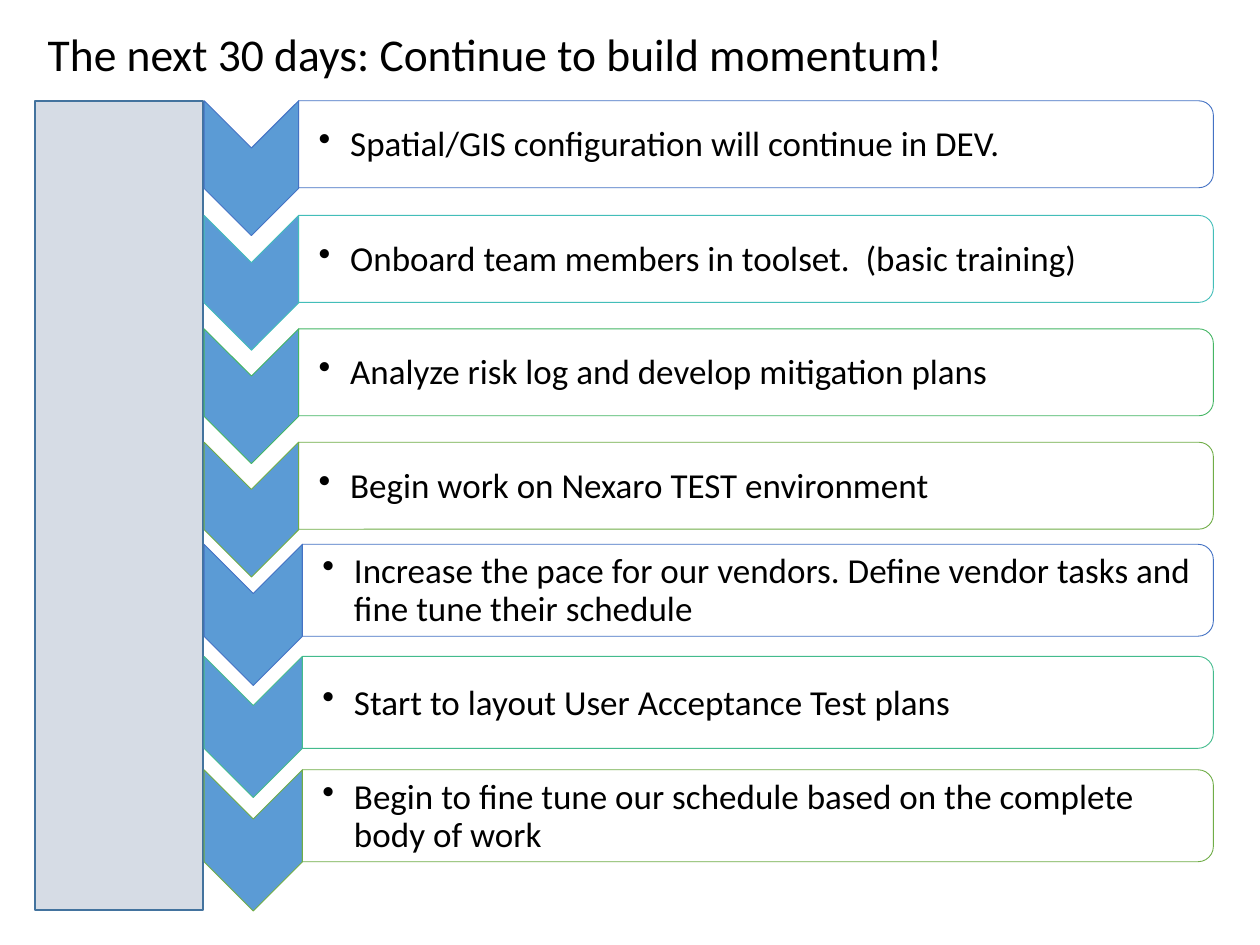
from lxml.etree import SubElement as Sub
from pptx import Presentation
from pptx.dml.color import RGBColor
from pptx.enum.shapes import MSO_SHAPE as Shape
from pptx.enum.text import MSO_ANCHOR as Anchor
from pptx.oxml.ns import qn
from pptx.util import Inches, Pt

BLACK = RGBColor(0x00, 0x00, 0x00)
WHITE = RGBColor(0xFF, 0xFF, 0xFF)
GREY = RGBColor(0xD6, 0xDC, 0xE5)
NAVY = RGBColor(0x43, 0x73, 0x9E)
SKY = RGBColor(0x5B, 0x9B, 0xD5)
BLUE = RGBColor(0x44, 0x72, 0xC4)
TEAL = RGBColor(0x43, 0xBE, 0xB9)
MINT = RGBColor(0x43, 0xBB, 0x8D)
GREEN = RGBColor(0x45, 0xB6, 0x64)
LEAF = RGBColor(0x70, 0xAD, 0x47)

LEFT, RIGHT = 1.62, 9.63
UPPER = (0.75, 1.07, 0.69)
LOWER = (0.78, 1.12, 0.73)
STEPS = [
    (0.8, UPPER, BLUE, "Spatial/GIS configuration will continue in DEV."),
    (1.71, UPPER, TEAL, "Onboard team members in toolset.  (basic training)"),
    (2.61, UPPER, GREEN, "Analyze risk log and develop mitigation plans"),
    (3.51, UPPER, LEAF, "Begin work on Nexaro TEST environment"),
    (4.32, LOWER, BLUE, "Increase the pace for our vendors. Define vendor tasks and fine tune their schedule"),
    (5.21, LOWER, MINT, "Start to layout User Acceptance Test plans"),
    (6.11, LOWER, LEAF, "Begin to fine tune our schedule based on the complete body of work"),
]


class Deck:
    """Holds the style and the current slide."""

    font = "Calibri"

    def __init__(self):
        self.prs = Presentation()
        self.prs.slide_width, self.prs.slide_height = Inches(10), Inches(7.5)
        self.slide = self.prs.slides.add_slide(self.prs.slide_layouts[6])

    def shape(self, kind, x, y, w, h, fill, line, width=0.5):
        item = self.slide.shapes.add_shape(kind, Inches(x), Inches(y), Inches(w), Inches(h))
        item.shadow.inherit = False
        item.fill.solid()
        item.fill.fore_color.rgb = fill
        item.line.color.rgb = line
        item.line.width = Pt(width)
        return item

    def turned(self, kind, x, y, w, h, fill, line):
        item = self.shape(kind, x + (w - h) / 2, y + (h - w) / 2, h, w, fill, line)
        item.rotation = 90
        return item

    def text(self, x, y, w, h, words, size):
        frame = self.slide.shapes.add_textbox(Inches(x), Inches(y), Inches(w), Inches(h)).text_frame
        frame.word_wrap = True
        para = frame.paragraphs[0]
        para.text = words
        para.font.name, para.font.size = self.font, Pt(size)
        para.font.color.rgb = BLACK
        return frame

    def bullet(self, x, y, w, h, words):
        frame = self.text(x, y, w, h, words, 20)
        frame.vertical_anchor = Anchor.MIDDLE
        frame.margin_left = Inches(0.16)
        frame.margin_top = frame.margin_right = frame.margin_bottom = Inches(0.01)
        para = frame.paragraphs[0]
        para.level, para.line_spacing = 1, 0.9
        props = para._p.get_or_add_pPr()
        props.set("marL", str(Inches(0.25)))
        props.set("indent", str(-Inches(0.25)))
        mark = props.makeelement(qn("a:buChar"), {"char": "•"})
        props.find(qn("a:lnSpc")).addnext(mark)

    def step(self, top, sizes, line, words):
        wide, tall, high = sizes
        left = LEFT + wide
        span = RIGHT - left
        self.turned(Shape.CHEVRON, LEFT, top, wide, tall, SKY, line)
        bar = self.turned(Shape.ROUND_2_SAME_RECTANGLE, left, top, span, high, WHITE, line)
        tint = bar._element.spPr.find(qn("a:solidFill"))[0]
        Sub(tint, qn("a:alpha"), val="90000")
        self.bullet(left, top + 0.04, span - 0.03, high - 0.06, words)


def main():
    deck = Deck()
    deck.shape(Shape.RECTANGLE, 0.28, 0.8, 1.33, 6.42, GREY, NAVY, 1)
    deck.text(0.28, 0.16, 9.35, 1.08, "The next 30 days: Continue to build momentum!", 26)
    for row in STEPS:
        deck.step(*row)
    deck.prs.save("out.pptx")


if __name__ == "__main__":
    main()
